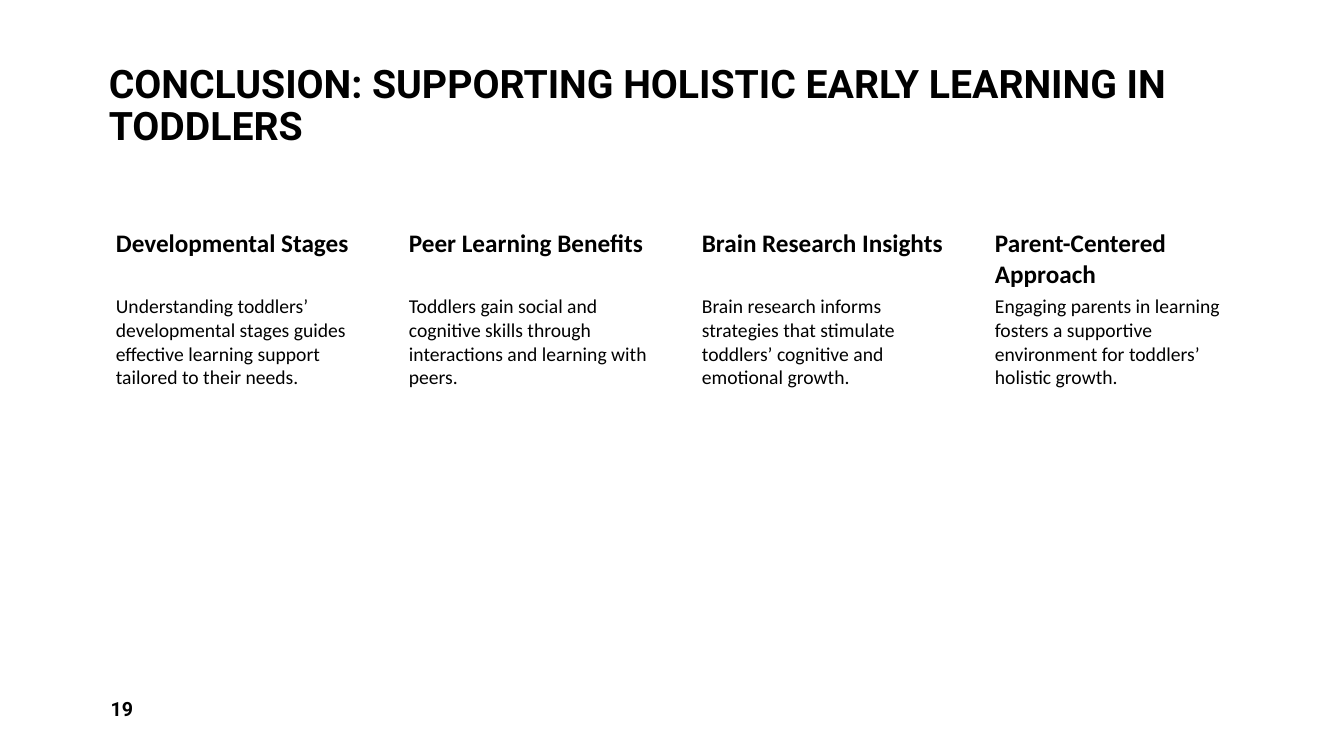
from pptx import Presentation
from pptx.dml.color import RGBColor
from pptx.enum.text import MSO_ANCHOR as Anchor
from pptx.util import Pt

COLOURS = {"background": "FFFFFF", "text": "000000"}
HEADING_FONT, BODY_FONT = "Roboto", "Calibri"

TITLE = "CONCLUSION: SUPPORTING HOLISTIC EARLY LEARNING IN TODDLERS"
TAKEAWAYS = [
    ("Developmental Stages",
     "Understanding toddlers’ developmental stages guides effective learning "
     "support tailored to their needs."),
    ("Peer Learning Benefits",
     "Toddlers gain social and cognitive skills through interactions and "
     "learning with peers."),
    ("Brain Research Insights",
     "Brain research informs strategies that stimulate toddlers’ cognitive "
     "and emotional growth."),
    ("Parent-Centered Approach",
     "Engaging parents in learning fosters a supportive environment for "
     "toddlers’ holistic growth."),
]


def add_text(slide, box, text, size, font, bold=False, anchor=Anchor.TOP,
             insets=(7.2, 3.6, 7.2, 3.6), line_spacing=1.0):
    """Place one paragraph in box (left, top, width, height)."""
    shape = slide.shapes.add_textbox(*map(Pt, box))
    frame = shape.text_frame
    frame.word_wrap = True
    frame.vertical_anchor = anchor
    (frame.margin_left, frame.margin_top,
     frame.margin_right, frame.margin_bottom) = map(Pt, insets)
    paragraph = frame.paragraphs[0]
    paragraph.line_spacing = line_spacing
    run = paragraph.add_run()
    run.text = text
    run.font.name = font
    run.font.size = Pt(size)
    run.font.bold = bold
    run.font.color.rgb = RGBColor.from_string(COLOURS["text"])


def add_title(slide, box):
    add_text(slide, box, TITLE, 28, HEADING_FONT, bold=True,
             anchor=Anchor.BOTTOM, line_spacing=0.9)


def add_page_number(slide, box):
    add_text(slide, box, "19", 14, HEADING_FONT, bold=True,
             anchor=Anchor.MIDDLE)


def add_takeaway(slide, box, heading, body):
    left, top, width, height = box
    heading_height = 48.2
    add_text(slide, (left, top, width, heading_height), heading, 18,
             BODY_FONT, bold=True, insets=(10.8, 2, 2, 2))
    add_text(slide, (left, top + heading_height, width,
                     height - heading_height), body, 14,
             BODY_FONT, insets=(10.8, 1.5, 1.5, 1.5))


def add_takeaways(slide, box, gap=19.2):
    """Share the width of box equally between the takeaways."""
    left, top, width, height = box
    count = len(TAKEAWAYS)
    column_width = (width - gap * (count - 1)) / count
    for index, (heading, body) in enumerate(TAKEAWAYS):
        column_left = left + index * (column_width + gap)
        add_takeaway(slide, (column_left, top, column_width, height),
                     heading, body)


def main():
    presentation = Presentation()
    presentation.slide_width = Pt(960)
    presentation.slide_height = Pt(540)
    slide = presentation.slides.add_slide(presentation.slide_layouts[6])
    fill = slide.background.fill
    fill.solid()
    fill.fore_color.rgb = RGBColor.from_string(COLOURS["background"])
    add_title(slide, (70.6, 5.8, 819.4, 104.4))
    add_page_number(slide, (72, 491.8, 210, 28.8))
    add_takeaways(slide, (72, 160.6, 818, 309.6))
    presentation.save("out.pptx")


if __name__ == "__main__":
    main()
